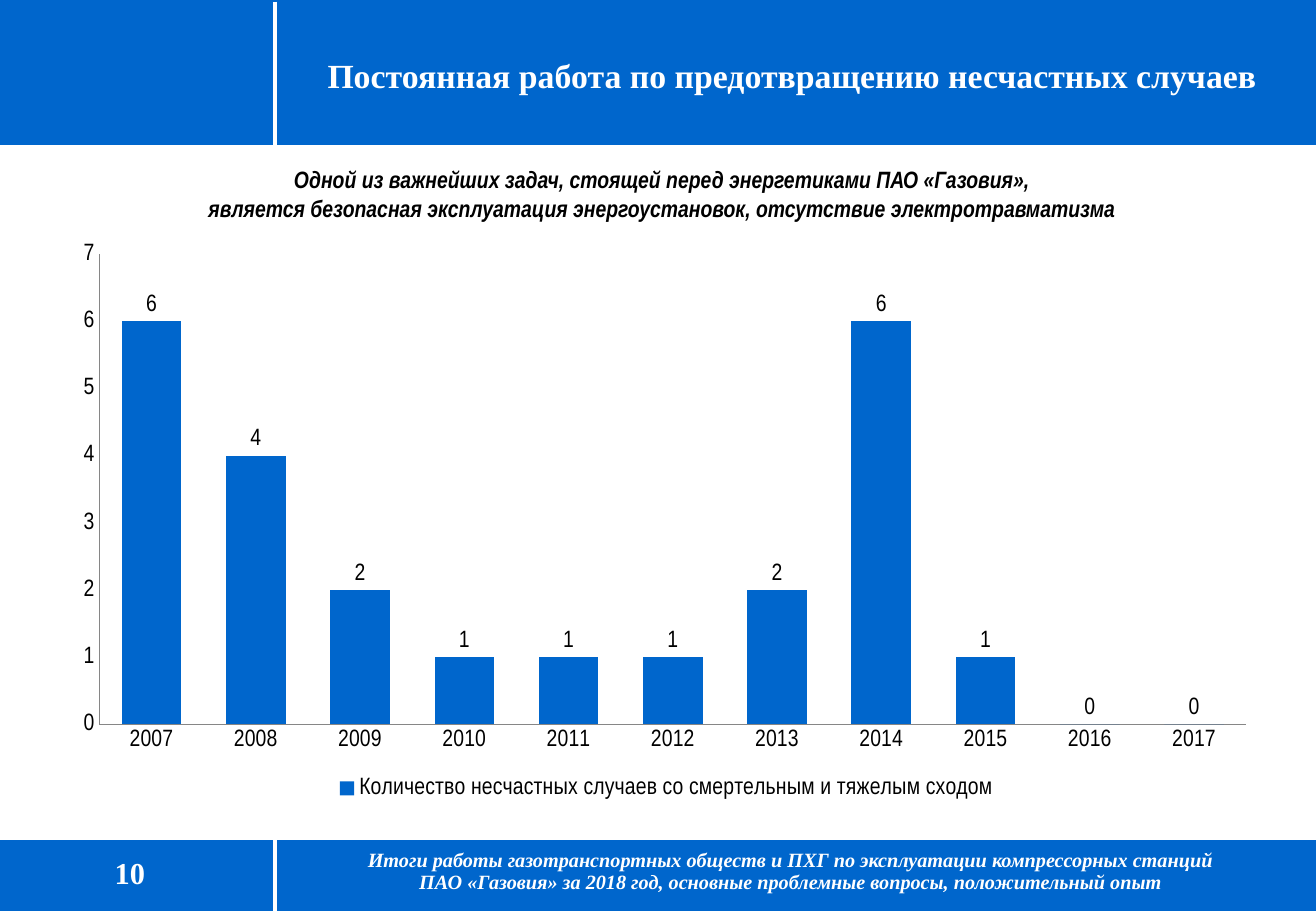
from lxml import etree
from pptx import Presentation
from pptx.chart.data import CategoryChartData
from pptx.dml.color import RGBColor
from pptx.enum.chart import XL_CHART_TYPE as ChartType
from pptx.enum.chart import XL_LABEL_POSITION as LabelPosition
from pptx.enum.chart import XL_LEGEND_POSITION as LegendPosition
from pptx.enum.chart import XL_TICK_MARK as TickMark
from pptx.enum.shapes import MSO_CONNECTOR as Connector
from pptx.enum.shapes import MSO_SHAPE as Shape
from pptx.enum.text import MSO_AUTO_SIZE as AutoSize
from pptx.enum.text import PP_ALIGN as Align
from pptx.oxml.ns import qn
from pptx.util import Pt

BLUE = RGBColor(0x00, 0x66, 0xCC)
WHITE = RGBColor(0xFF, 0xFF, 0xFF)
BLACK = RGBColor(0x00, 0x00, 0x00)
GRAY = RGBColor(0x86, 0x86, 0x86)
SERIF = "Times New Roman"
NARROW = "Arial Narrow"

WIDTH, HEIGHT = 780, 540
HEADER_BOTTOM, FOOTER_TOP, DIVIDER_X = 86, 497.5, 163

ACCIDENTS = {
    "2007": 6, "2008": 4, "2009": 2, "2010": 1, "2011": 1, "2012": 1,
    "2013": 2, "2014": 6, "2015": 1, "2016": 0, "2017": 0,
}
PLOT_LAYOUT = {
    "layoutTarget": "inner", "xMode": "edge", "yMode": "edge",
    "x": 0.03, "y": 0.04, "w": 0.95, "h": 0.82,
}


def set_font(font, color, **values):
    """Apply the colour and the format values to a font."""
    font.color.rgb = color
    for name, value in values.items():
        setattr(font, name, value)


def add_panel(slide, left, top, width, height):
    """Add the white content area."""
    shape = slide.shapes.add_shape(
        Shape.RECTANGLE, Pt(left), Pt(top), Pt(width), Pt(height))
    shape.shadow.inherit = False
    shape.fill.solid()
    shape.fill.fore_color.rgb = WHITE
    shape.line.fill.background()


def add_line(slide, start, end, weight):
    """Add a white dividing line."""
    line = slide.shapes.add_connector(
        Connector.STRAIGHT, *(Pt(value) for value in (*start, *end)))
    line.line.color.rgb = WHITE
    line.line.width = Pt(weight)
    etree.SubElement(line.element.spPr, qn("a:effectLst"))


def add_text(slide, box, lines, color, spacing=1.0, wrap=True, **values):
    """Add a centred text box with one paragraph for each line."""
    frame = slide.shapes.add_textbox(*(Pt(value) for value in box)).text_frame
    frame.word_wrap = wrap
    frame.auto_size = AutoSize.SHAPE_TO_FIT_TEXT
    for index, line in enumerate(lines):
        paragraph = frame.add_paragraph() if index else frame.paragraphs[0]
        paragraph.text = line
        paragraph.alignment = Align.CENTER
        paragraph.line_spacing = spacing
        set_font(paragraph.font, color, bold=True, **values)


def set_plot_layout(chart):
    """Fix the place of the plot area inside the chart."""
    plot_area = chart.element.find(f".//{qn('c:plotArea')}")
    for layout in plot_area.findall(qn("c:layout")):
        plot_area.remove(layout)
    layout = etree.Element(qn("c:layout"))
    manual = etree.SubElement(layout, qn("c:manualLayout"))
    for name, value in PLOT_LAYOUT.items():
        etree.SubElement(manual, qn(f"c:{name}")).set("val", str(value))
    plot_area.insert(0, layout)


def add_accident_chart(slide, box):
    """Add the column chart of accidents by year."""
    data = CategoryChartData(number_format="0")
    data.categories = list(ACCIDENTS)
    data.add_series(
        "Количество несчастных случаев со смертельным и тяжелым сходом",
        list(ACCIDENTS.values()))
    chart = slide.shapes.add_chart(
        ChartType.COLUMN_CLUSTERED, *(Pt(value) for value in box), data).chart
    set_font(chart.font, BLACK, name=NARROW, size=Pt(14))
    chart.has_title = False
    chart.has_legend = True
    chart.legend.position = LegendPosition.BOTTOM
    chart.legend.include_in_layout = False
    set_plot_layout(chart)

    for axis in (chart.category_axis, chart.value_axis):
        axis.major_tick_mark = axis.minor_tick_mark = TickMark.NONE
        axis.has_major_gridlines = False
        axis.format.line.color.rgb = GRAY
        axis.format.line.width = Pt(0.75)
    chart.value_axis.minimum_scale = 0
    chart.value_axis.maximum_scale = 7
    chart.value_axis.major_unit = 1

    plot = chart.plots[0]
    plot.gap_width = 75
    plot.vary_by_categories = False
    plot.series[0].format.fill.solid()
    plot.series[0].format.fill.fore_color.rgb = BLUE
    plot.has_data_labels = True
    plot.data_labels.show_value = True
    plot.data_labels.position = LabelPosition.OUTSIDE_END


def main():
    """Build the slide and save it."""
    presentation = Presentation()
    presentation.slide_width = Pt(WIDTH)
    presentation.slide_height = Pt(HEIGHT)
    slide = presentation.slides.add_slide(presentation.slide_layouts[6])
    slide.background.fill.solid()
    slide.background.fill.fore_color.rgb = BLUE

    add_panel(slide, 0, HEADER_BOTTOM, WIDTH, FOOTER_TOP - HEADER_BOTTOM)
    add_line(slide, (DIVIDER_X, 1), (DIVIDER_X, HEADER_BOTTOM), 2)
    add_line(slide, (0, FOOTER_TOP), (WIDTH, FOOTER_TOP), 1.25)
    add_line(slide, (DIVIDER_X, FOOTER_TOP), (DIVIDER_X, HEIGHT), 2)

    add_text(slide, (60.5, 502.5, 33, 29), ["10"], WHITE, wrap=False,
             name=SERIF, size=Pt(18))
    add_accident_chart(slide, (37.5, 137, 715.5, 340))
    add_text(slide, (16.5, 94.5, 752, 41), [
        "Одной из важнейших задач, стоящей перед энергетиками ПАО «Газовия»,",
        "является безопасная эксплуатация энергоустановок, "
        "отсутствие электротравматизма",
    ], BLACK, name=NARROW, size=Pt(14), italic=True)
    add_text(slide, (182, 31.5, 575, 29),
             ["Постоянная работа по предотвращению несчастных случаев"],
             WHITE, spacing=0.9, wrap=False, name=SERIF, size=Pt(20))
    add_text(slide, (165, 500.5, 607.5, 33), [
        "Итоги работы газотранспортных обществ и ПХГ "
        "по эксплуатации компрессорных станций",
        "ПАО «Газовия» за 2018 год, основные проблемные вопросы, "
        "положительный опыт",
    ], WHITE, spacing=0.9, name=SERIF, size=Pt(12), italic=True)

    presentation.save("out.pptx")


if __name__ == "__main__":
    main()
